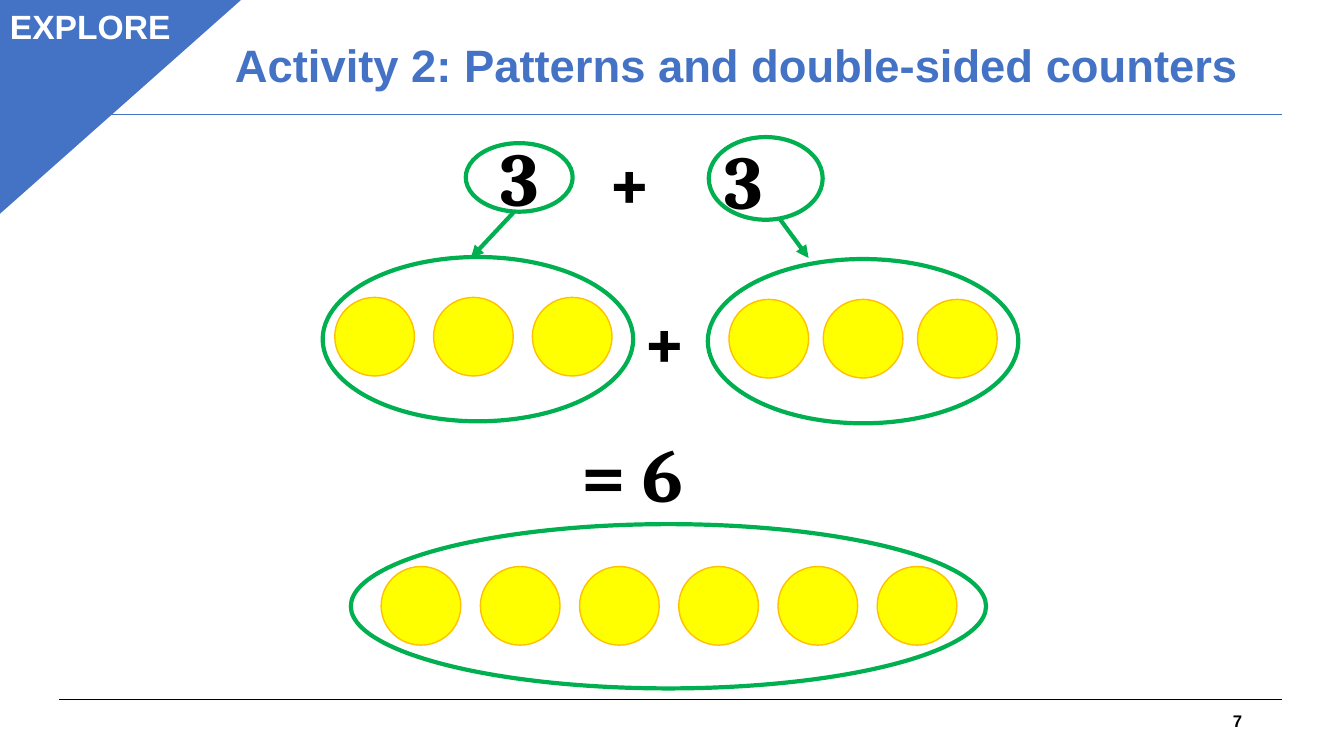
import pptx
import pptx.util
import pptx.dml.color
import pptx.enum.shapes
import pptx.enum.text
import pptx.oxml.ns
import lxml.etree

Inches = pptx.util.Inches
Pt = pptx.util.Pt
ALIGN = pptx.enum.text.PP_ALIGN
ANCHOR = pptx.enum.text.MSO_ANCHOR
SHAPE = pptx.enum.shapes.MSO_SHAPE

BLUE, GREEN, BLACK, WHITE = "4472C4", "00B050", "000000", "FFFFFF"
YELLOW, GOLD = "FFFF00", "FFC000"
COUNTER_WIDTH, COUNTER_HEIGHT = 0.79, 0.78


def color(hex_value):
    return pptx.dml.color.RGBColor.from_string(hex_value)


def set_values(target, values):
    for name, value in values.items():
        setattr(target, name, value)


def add_xml(parent, tag, **attributes):
    return lxml.etree.SubElement(parent, pptx.oxml.ns.qn(tag), attributes)


class SlideBuilder:
    number_font = {"name": "Cambria", "size": Pt(54), "bold": True}

    def __init__(self, presentation):
        self.slide = presentation.slides.add_slide(presentation.slide_layouts[5])
        self.shapes = self.slide.shapes  # where new elements go

    def start_group(self):
        self.shapes = self.slide.shapes.add_group_shape().shapes

    def end_group(self):
        self.shapes = self.slide.shapes

    def fill_text(self, shape, text, font, font_color=BLACK, align=ALIGN.LEFT,
                  anchor=ANCHOR.TOP, wrap=True):
        frame = shape.text_frame
        set_values(frame, {"word_wrap": wrap, "vertical_anchor": anchor,
                           "auto_size": pptx.enum.text.MSO_AUTO_SIZE.NONE})
        paragraph = frame.paragraphs[0]
        paragraph.alignment = align
        run = paragraph.add_run()
        run.text = text
        set_values(run.font, font)
        run.font.color.rgb = color(font_color)
        return paragraph

    def title(self, box, text, size):
        title = self.slide.shapes.title
        set_values(title, dict(zip(("left", "top", "width", "height"), map(Inches, box))))
        font = {"name": "Arial", "size": Pt(size), "bold": True}
        self.fill_text(title, text, font, BLUE, anchor=ANCHOR.MIDDLE).line_spacing = 0.9

    def text(self, box, text, font=None, **options):
        textbox = self.shapes.add_textbox(*map(Inches, box))
        return self.fill_text(textbox, text, font or self.number_font, **options)

    def shape(self, kind, box, line, width, fill=None):
        shape = self.shapes.add_shape(kind, *map(Inches, box))
        shape.shadow.inherit = False
        if fill:
            shape.fill.solid()
            shape.fill.fore_color.rgb = color(fill)
        else:
            shape.fill.background()
        shape.line.color.rgb = color(line)
        shape.line.width = Pt(width)
        return shape

    def ring(self, *box):
        self.shape(SHAPE.OVAL, box, GREEN, 3)

    def counters(self, count, first, last, top):
        step = (last - first) / (count - 1)
        for index in range(count):
            box = (first + index * step, top, COUNTER_WIDTH, COUNTER_HEIGHT)
            self.shape(SHAPE.OVAL, box, GOLD, 1, YELLOW)

    def line(self, start, end, line, width, arrow=False):
        connector = self.shapes.add_connector(
            pptx.enum.shapes.MSO_CONNECTOR.STRAIGHT, *map(Inches, start + end))
        connector.line.color.rgb = color(line)
        connector.line.width = Pt(width)
        if arrow:
            add_xml(connector.line._get_or_add_ln(), "a:tailEnd", type="triangle")
        add_xml(connector._element.spPr, "a:effectLst")


def main():
    presentation = pptx.Presentation()
    set_values(presentation, {"slide_width": Inches(13.33), "slide_height": Inches(7.5)})
    builder = SlideBuilder(presentation)

    # Title, rules and page number
    builder.title((2.23, 0.12, 10.35, 1.11),
                  "Activity 2: Patterns and double-sided counters", 32.4)
    for y, line_color in ((6.94, BLACK), (1.14, BLUE)):
        builder.line((0.59, y), (12.72, y), line_color, 0.75)
    builder.text((9.42, 6.95, 3, 0.4), "7", {"name": "Arial", "size": Pt(12), "bold": True},
                 align=ALIGN.RIGHT, anchor=ANCHOR.MIDDLE)

    # First addend and the sum
    builder.text((4.87, 1.25, 0.69, 1.01), "3")
    builder.text((5.61, 4.19, 1.33, 1.01), "= 6", align=ALIGN.CENTER, wrap=False)

    # Six counters for the sum
    builder.start_group()
    builder.counters(6, 3.78, 8.7, 5.62)
    builder.ring(3.48, 5.2, 6.3, 1.63)

    # Three counters on the left
    builder.start_group()
    builder.counters(3, 3.32, 5.28, 2.95)
    builder.ring(3.2, 2.55, 3.08, 1.63)
    builder.line((5.1, 2.1), (4.67, 2.56), GREEN, 3, arrow=True)
    builder.ring(4.62, 1.42, 1.06, 0.68)

    # Plus sign and three counters on the right
    builder.start_group()
    builder.text((6.27, 2.86, 0.76, 1.01), "+", wrap=False)
    builder.counters(3, 7.23, 9.1, 2.97)
    builder.ring(7.02, 2.57, 3.08, 1.63)
    builder.line((7.74, 2.18), (8.02, 2.56), GREEN, 3, arrow=True)
    builder.ring(7.03, 1.36, 1.13, 0.82)
    builder.end_group()

    # Corner banner
    corner = builder.shape(SHAPE.ISOSCELES_TRIANGLE, (-0.01, 0, 2.39, 2.12), BLUE, 1, BLUE)
    corner.adjustments[0] = 0
    corner._element.spPr.xfrm.set("flipV", "1")
    label = builder.shape(SHAPE.RECTANGLE, (-0.01, 0.01, 1.81, 0.5), BLUE, 0.75, BLUE)
    builder.fill_text(label, "EXPLORE", {"name": "Arial", "size": Pt(24), "bold": True},
                      WHITE, align=ALIGN.CENTER)

    # Plus sign and second addend, set apart by a tab stop
    addend = builder.text((5.93, 1.28, 2.11, 1.01), "+\t3")
    tabs = add_xml(addend._p.get_or_add_pPr(), "a:tabLst")
    add_xml(tabs, "a:tab", pos=str(Inches(1.16)), algn="l")

    presentation.save("out.pptx")


if __name__ == "__main__":
    main()
